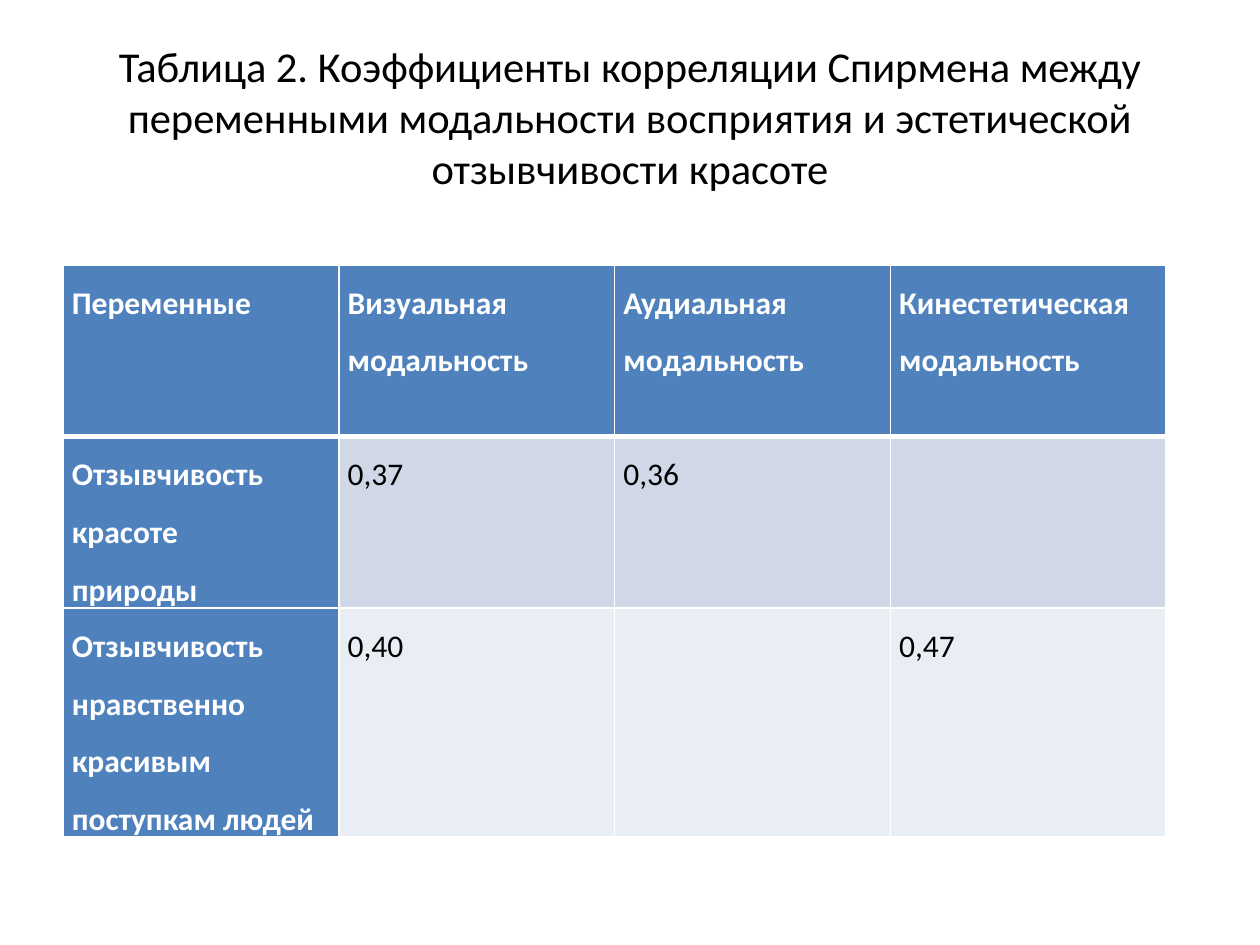
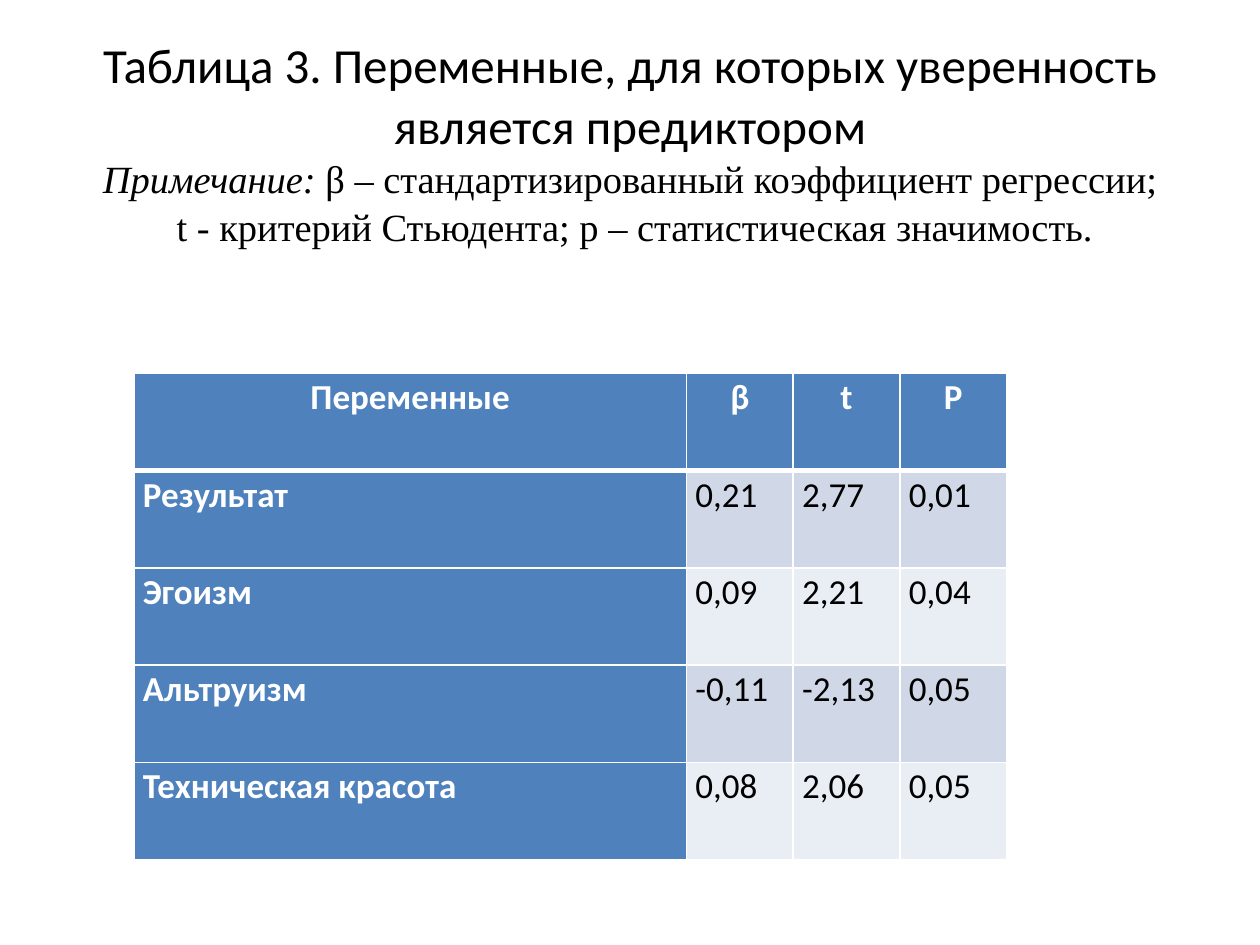
"""Build two slides, each with a title and a table of statistical results."""
from lxml import etree
from pptx import Presentation
from pptx.dml.color import RGBColor
from pptx.enum.text import MSO_ANCHOR, PP_ALIGN
from pptx.oxml.ns import qn
from pptx.util import Cm, Pt

LEFT, CENTER, JUSTIFY = PP_ALIGN.LEFT, PP_ALIGN.CENTER, PP_ALIGN.JUSTIFY
MIDDLE = MSO_ANCHOR.MIDDLE

BLACK = RGBColor(0x00, 0x00, 0x00)
WHITE = RGBColor(0xFF, 0xFF, 0xFF)
BLUE = RGBColor(0x4F, 0x81, 0xBD)
BANDS = (RGBColor(0xD0, 0xD8, 0xE8), RGBColor(0xE9, 0xED, 0xF4))
SANS, SERIF = "Calibri", "Times New Roman"
TITLE_LEFT, TITLE_WIDTH = 1.27, 22.86

SLIDES = [
    {
        "title": {
            "top": 0.76, "height": 3.18, "bottom_inset": 0.13, "spacing": 1.0,
            "lines": [
                [("Таблица 2. Коэффициенты корреляции Спирмена между переменными "
                  "модальности восприятия и эстетической отзывчивости красоте",
                  SANS, 24.3, False)],
            ],
        },
        "table": {
            "left": 1.27, "top": 5.34, "widths": [5.56] * 4,
            "heights": [3.46, 3.46, 4.6],
            "size": 18, "spacing": 1.5, "head_align": JUSTIFY, "body_align": JUSTIFY,
            "rows": [
                ["Переменные", "Визуальная\nмодальность", "Аудиальная\nмодальность",
                 "Кинестетическая\nмодальность"],
                ["Отзывчивость красоте\nприроды", "0,37", "0,36", ""],
                ["Отзывчивость нравственно\nкрасивым поступкам людей", "0,40", "", "0,47"],
            ],
        },
    },
    {
        "title": {
            "top": 0.33, "height": 6.0, "bottom_inset": 1.1, "spacing": 1.03,
            "lines": [
                [("Таблица 3. Переменные, для которых уверенность является предиктором",
                  SANS, 28, False)],
                [("Примечание: ", SERIF, 22, True),
                 ("β – стандартизированный коэффициент регрессии;", SERIF, 22, False)],
                [(" t - критерий Стьюдента; p – статистическая значимость.",
                  SERIF, 22, False)],
            ],
        },
        "table": {
            "left": 2.7, "top": 7.53, "widths": [11.14] + [2.15] * 3,
            "heights": [1.96] * 5,
            "size": 20, "spacing": 1.07, "head_align": CENTER, "body_align": LEFT,
            "rows": [
                ["Переменные", "β", "t", "P"],
                ["Результат", "0,21", "2,77", "0,01"],
                ["Эгоизм", "0,09", "2,21", "0,04"],
                ["Альтруизм", "-0,11", "-2,13", "0,05"],
                ["Техническая красота", "0,08", "2,06", "0,05"],
            ],
        },
    },
]


def add_title(s, title):
    sp = s.shapes.add_textbox(Cm(TITLE_LEFT), Cm(title["top"]),
                              Cm(TITLE_WIDTH), Cm(title["height"]))
    tf = sp.text_frame
    tf.word_wrap = True
    tf.vertical_anchor = MIDDLE
    tf.margin_bottom = Cm(title["bottom_inset"])
    p = tf.paragraphs[0]
    p.alignment = CENTER
    p.line_spacing = title["spacing"]
    p.font.color.rgb = BLACK
    for i, line in enumerate(title["lines"]):
        if i:
            p.add_line_break()
        for text, font, size, italic in line:
            r = p.add_run()
            r.text = text
            r.font.name, r.font.size, r.font.italic = font, Pt(size), italic


def set_borders(cell, top, bottom):
    tc_pr = cell._tc.get_or_add_tcPr()
    sides = (("a:lnL", 1), ("a:lnR", 1), ("a:lnT", top), ("a:lnB", bottom))
    for i, (tag, width) in enumerate(sides):
        ln = etree.Element(qn(tag), w=str(Pt(width)))
        fill = etree.SubElement(ln, qn("a:solidFill"))
        etree.SubElement(fill, qn("a:srgbClr"), val=str(WHITE))
        tc_pr.insert(i, ln)


def fill_cell(cell, text, row, col, table):
    heading = row == 0 or col == 0
    cell.fill.solid()
    cell.fill.fore_color.rgb = BLUE if heading else BANDS[(row - 1) % 2]
    set_borders(cell, 3 if row == 1 else 1, 3 if row == 0 else 1)
    cell.margin_left = cell.margin_right = Cm(0.18)
    cell.margin_top = cell.margin_bottom = 0
    cell.text = text
    for p in cell.text_frame.paragraphs:
        p.alignment = table["body_align"] if row else table["head_align"]
        p.line_spacing = table["spacing"]
        p.font.name, p.font.size, p.font.bold = SANS, Pt(table["size"]), heading
        p.font.color.rgb = WHITE if heading else BLACK


def add_data_table(s, table):
    rows, widths, heights = table["rows"], table["widths"], table["heights"]
    tbl = s.shapes.add_table(len(rows), len(widths), Cm(table["left"]), Cm(table["top"]),
                             Cm(sum(widths)), Cm(sum(heights))).table
    tbl.horz_banding = False
    for column, width in zip(tbl.columns, widths):
        column.width = Cm(width)
    for row, height in zip(tbl.rows, heights):
        row.height = Cm(height)
    for i, texts in enumerate(rows):
        for j, text in enumerate(texts):
            fill_cell(tbl.cell(i, j), text, i, j, table)


def main():
    prs = Presentation()
    prs.slide_width, prs.slide_height = Cm(25.4), Cm(19.05)
    for content in SLIDES:
        s = prs.slides.add_slide(prs.slide_layouts[6])
        add_title(s, content["title"])
        add_data_table(s, content["table"])
    prs.save("out.pptx")


if __name__ == "__main__":
    main()
